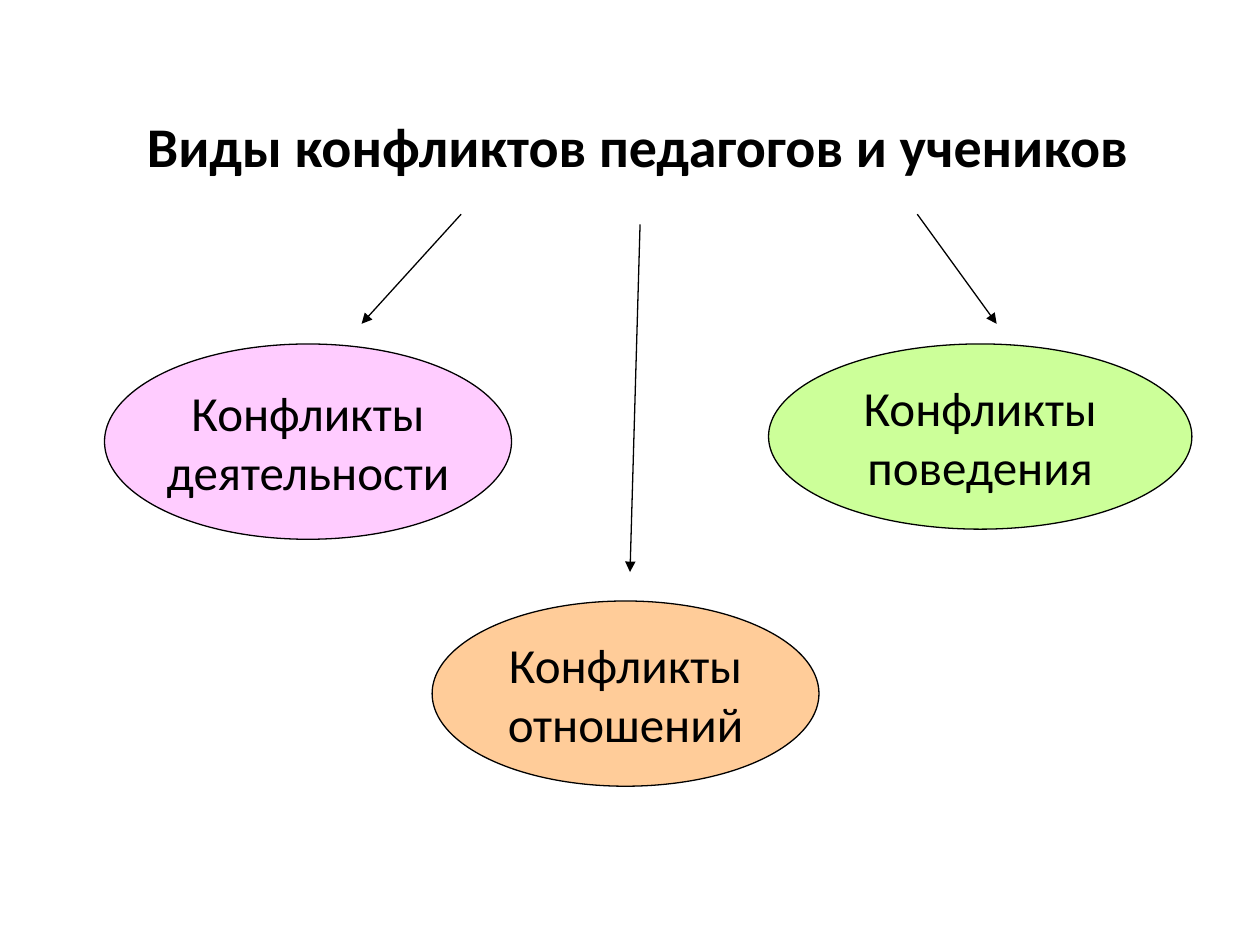
from dataclasses import dataclass

from lxml.etree import SubElement
from pptx import Presentation
from pptx.dml.color import RGBColor
from pptx.enum.shapes import MSO_CONNECTOR, MSO_SHAPE
from pptx.enum.text import MSO_ANCHOR, PP_ALIGN
from pptx.oxml.ns import qn
from pptx.slide import Slide
from pptx.text.text import TextFrame
from pptx.util import Inches, Pt

FONT = "Calibri"
BLACK = "000000"
LINE_WIDTH = Pt(0.75)


@dataclass
class ConflictType:
    text: str
    left: float
    top: float
    width: float
    height: float
    fill: str


@dataclass
class Arrow:
    start: tuple[float, float]
    end: tuple[float, float]


CONFLICT_TYPES = [
    ConflictType("Конфликты\n деятельности ", 0.83, 2.73, 3.23, 1.55, "FFCCFF"),
    ConflictType("Конфликты\n отношений ", 3.43, 4.77, 3.07, 1.47, "FFCC99"),
    ConflictType("Конфликты\n поведения ", 6.1, 2.73, 3.36, 1.47, "CCFF99"),
]

ARROWS = [
    Arrow((3.66, 1.7), (2.87, 2.57)),
    Arrow((5.08, 1.78), (5, 4.54)),
    Arrow((7.28, 1.7), (7.91, 2.57)),
]


def color(value: str) -> RGBColor:
    return RGBColor.from_string(value)


def format_text(text_frame: TextFrame, size: int, bold: bool = False) -> None:
    text_frame.vertical_anchor = MSO_ANCHOR.MIDDLE
    for paragraph in text_frame.paragraphs:
        paragraph.alignment = PP_ALIGN.CENTER
        for run in paragraph.runs:
            run.font.name = FONT
            run.font.size = Pt(size)
            run.font.bold = bold
            run.font.color.rgb = color(BLACK)


def add_title(slide: Slide, text: str) -> None:
    title = slide.shapes.title
    title.left, title.top = Inches(0.51), Inches(0.84)
    title.width, title.height = Inches(9.21), Inches(0.63)
    title.text_frame.text = text
    format_text(title.text_frame, 32, bold=True)


def add_ellipse(slide: Slide, conflict: ConflictType) -> None:
    shape = slide.shapes.add_shape(
        MSO_SHAPE.OVAL,
        Inches(conflict.left), Inches(conflict.top),
        Inches(conflict.width), Inches(conflict.height),
    )
    shape.shadow.inherit = False
    shape.fill.solid()
    shape.fill.fore_color.rgb = color(conflict.fill)
    shape.line.color.rgb = color(BLACK)
    shape.line.width = LINE_WIDTH
    shape.text_frame.text = conflict.text
    shape.text_frame.word_wrap = False
    format_text(shape.text_frame, 28)


def add_arrow(slide: Slide, arrow: Arrow) -> None:
    connector = slide.shapes.add_connector(
        MSO_CONNECTOR.STRAIGHT,
        *(Inches(value) for value in arrow.start + arrow.end),
    )
    connector.line.color.rgb = color(BLACK)
    connector.line.width = LINE_WIDTH
    # Arrowhead at the end, and no theme shadow
    properties = connector._element.spPr
    SubElement(properties.find(qn("a:ln")), qn("a:tailEnd"), type="triangle")
    SubElement(properties, qn("a:effectLst"))


def main() -> None:
    presentation = Presentation()
    presentation.slide_width = Inches(10)
    presentation.slide_height = Inches(7.5)
    title_only = presentation.slide_layouts[5]
    slide = presentation.slides.add_slide(title_only)

    # Heading
    add_title(slide, "Виды конфликтов педагогов и учеников ")

    # Kinds of conflict
    for conflict in CONFLICT_TYPES:
        add_ellipse(slide, conflict)

    # Arrows from the heading to each kind
    for arrow in ARROWS:
        add_arrow(slide, arrow)

    presentation.save("out.pptx")


if __name__ == "__main__":
    main()
